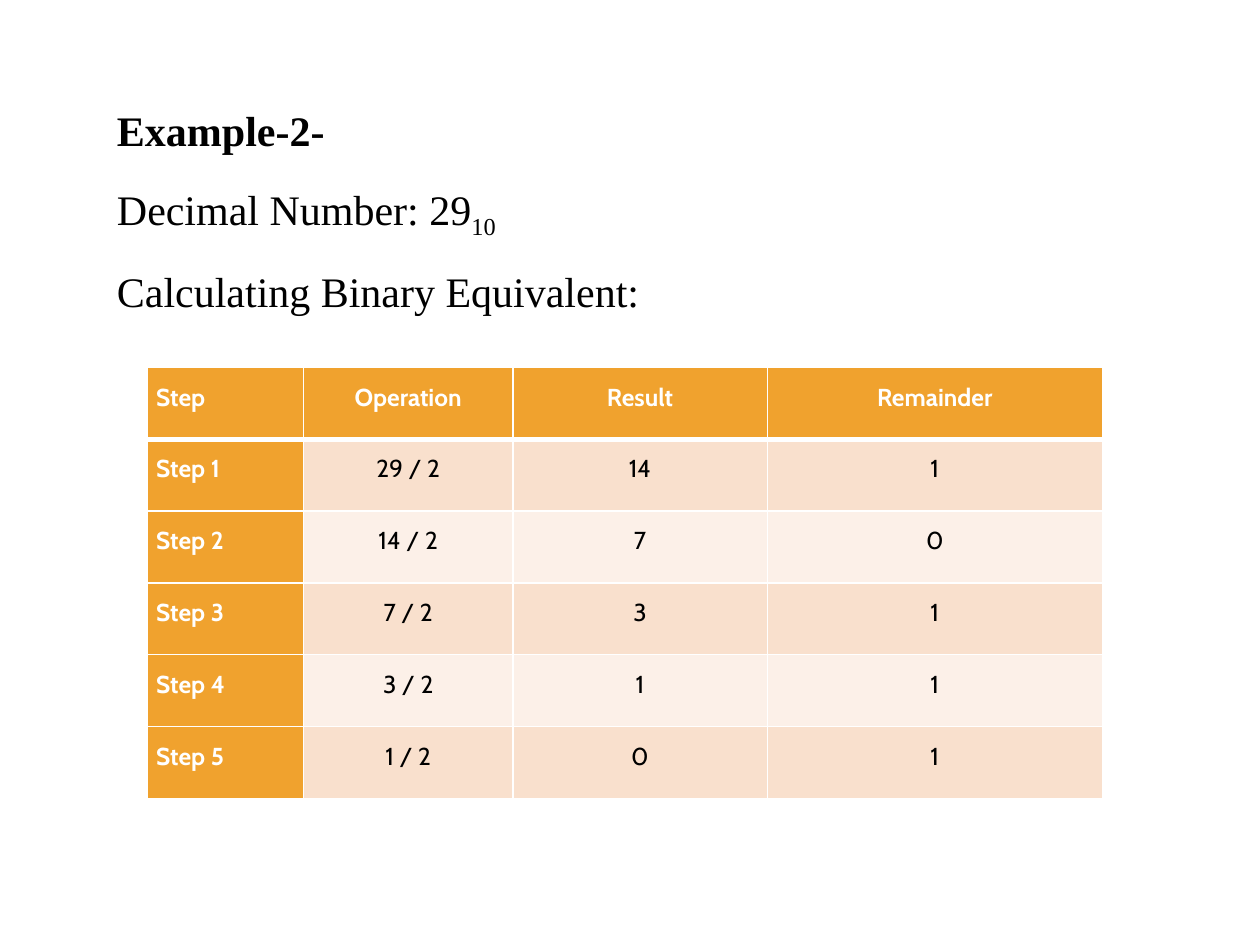
from lxml import etree
from pptx import Presentation, util as u
from pptx.dml.color import RGBColor
from pptx.enum import text
from pptx.oxml import ns

COLORS = {"ink": "000000", "white": "FFFFFF", "header": "F0A22E",
          "band_dark": "F9E0CD", "band_light": "FCF0E8"}
HEADINGS = ["Step", "Operation", "Result", "Remainder"]
COLUMN_WIDTHS = [1.24, 1.66, 2.02, 2.66]


class SlideBuilder:
    body_font, table_font = "Times New Roman", "Cabin"
    body_size, table_size = 24, 14
    line_spacing = 1.5

    def __init__(self, deck):
        self.width, self.height = deck.slide_width, deck.slide_height
        self.slide = deck.slides.add_slide(deck.slide_layouts[6])

    def area(self, left, top, width, height):
        return (round(left * self.width), round(top * self.height),
                round(width * self.width), round(height * self.height))

    def add_span(self, para, words, font, size, color, bold=False):
        span = para.add_run()
        span.text = words
        span.font.name, span.font.size, span.font.bold = font, u.Pt(size), bold
        span.font.color.rgb = RGBColor.from_string(COLORS[color])
        return span

    def add_text(self, area, lines):
        frame = self.slide.shapes.add_textbox(*self.area(*area)).text_frame
        frame.word_wrap = True
        frame.auto_size = text.MSO_AUTO_SIZE.SHAPE_TO_FIT_TEXT
        for index, spans in enumerate(lines):
            para = frame.add_paragraph() if index else frame.paragraphs[0]
            para.line_spacing = self.line_spacing
            for words, bold, baseline in spans:
                span = self.add_span(para, words, self.body_font, self.body_size, "ink", bold)
                if baseline:
                    span.font._element.set("baseline", str(baseline * 1000))

    def add_borders(self, cell, row):
        widths = {"lnL": 1, "lnR": 1, "lnT": 3 if row == 1 else 1, "lnB": 3 if row == 0 else 1}
        properties = cell._tc.get_or_add_tcPr()
        for side, width in widths.items():
            line = etree.SubElement(properties, ns.qn(f"a:{side}"), w=str(u.Pt(width)))
            fill = etree.SubElement(line, ns.qn("a:solidFill"))
            etree.SubElement(fill, ns.qn("a:srgbClr"), val=COLORS["white"])

    def fill_cell(self, cell, words, row, column):
        is_heading = row == 0 or column == 0
        band = "band_dark" if row % 2 else "band_light"
        self.add_borders(cell, row)
        cell.fill.solid()
        cell.fill.fore_color.rgb = RGBColor.from_string(COLORS["header" if is_heading else band])
        cell.margin_left = cell.margin_right = u.Inches(0.07)
        cell.margin_top = cell.margin_bottom = 0
        para = cell.text_frame.paragraphs[0]
        para.alignment = text.PP_ALIGN.CENTER if column else text.PP_ALIGN.JUSTIFY
        para.line_spacing = self.line_spacing
        self.add_span(para, words, self.table_font, self.table_size,
                      "white" if is_heading else "ink", is_heading)

    def add_table(self, area, rows, column_widths):
        table = self.slide.shapes.add_table(len(rows), len(column_widths), *self.area(*area)).table
        table.first_col = True
        for column, width in zip(table.columns, column_widths):
            column.width = u.Inches(width)
        for row, values in enumerate(rows):
            for column, words in enumerate(values):
                self.fill_cell(table.cell(row, column), words, row, column)


def division_rows(number):
    rows = []
    while number:
        result, remainder = divmod(number, 2)
        rows.append([f"Step {len(rows) + 1}", f"{number} / 2", str(result), str(remainder)])
        number = result
    return rows


def main():
    deck = Presentation()
    deck.slide_width, deck.slide_height = u.Inches(10), u.Inches(7.5)
    page = SlideBuilder(deck)
    page.add_table((0.117, 0.389, 0.758, 0.456), [HEADINGS] + division_rows(29), COLUMN_WIDTHS)
    page.add_text((0.083, 0.077, 0.5, 0.247), [
        [("Example-2-", True, 0)],
        [("Decimal Number: 29", False, 0), ("10", False, -25)],
        [("Calculating Binary Equivalent:", False, 0)],
    ])
    deck.save("out.pptx")


if __name__ == "__main__":
    main()
